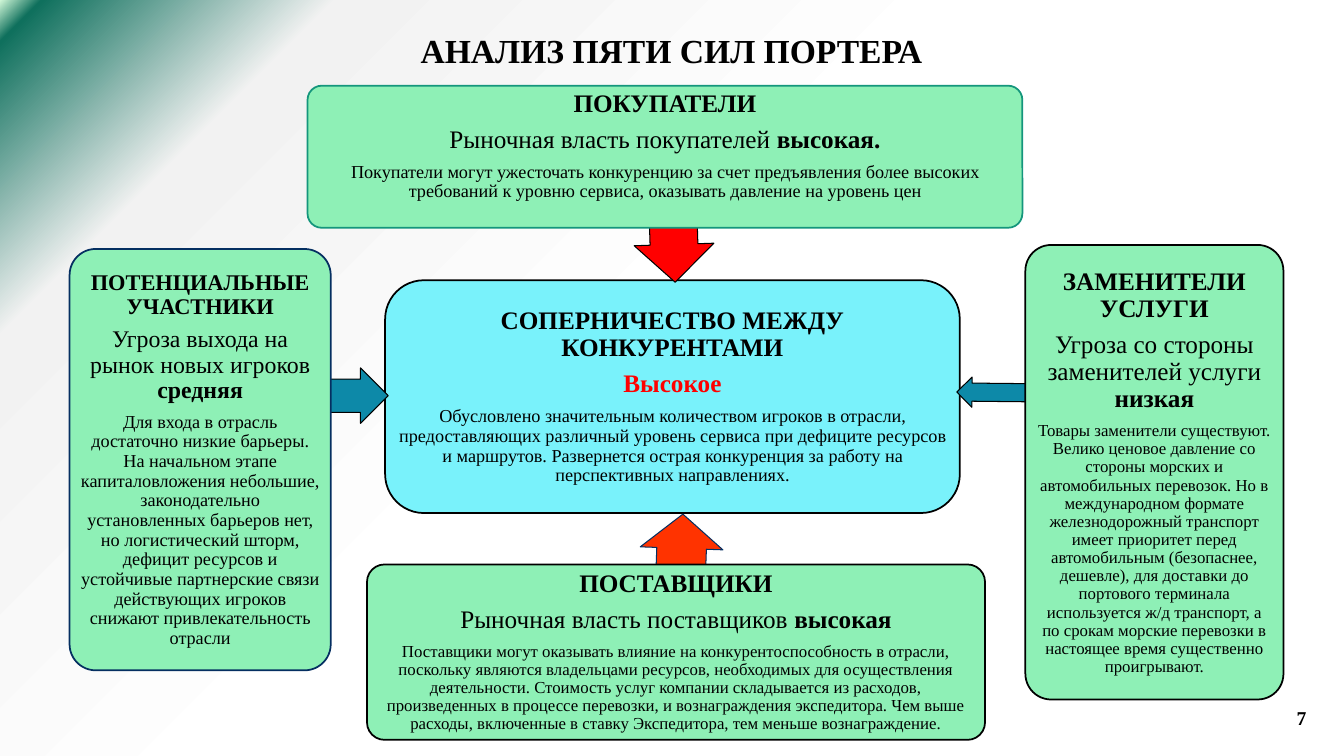
import pptx
import pptx.util
import pptx.oxml
import pptx.dml.color
import pptx.enum.shapes
import pptx.enum.text

Inches = pptx.util.Inches
Pt = pptx.util.Pt
Kind = pptx.enum.shapes.MSO_SHAPE
Align = pptx.enum.text.PP_ALIGN
Anchor = pptx.enum.text.MSO_ANCHOR
GREEN, BLACK, NAVY = "8EF0B6", "000000", "052F61"


def paint(item, tone):
    if hasattr(item, "solid"):
        item.solid()
        item = item.fore_color
    else:
        item = item.color
    item.rgb = pptx.dml.color.RGBColor.from_string(tone)


def style(para, size, tone=BLACK, bold=None):
    para.alignment = Align.CENTER
    para.font.name = "Times New Roman"
    para.font.size = Pt(size)
    para.font.bold = bold
    paint(para.font, tone)


deck = pptx.Presentation()
deck.slide_width = Inches(13.33)
deck.slide_height = Inches(7.5)
slide = deck.slides.add_slide(deck.slide_layouts[5])

stops = [(53, "FFFFFF"), (84, "F2F2F2"), (98, "0F705D"), (100, "D3FADA")]
marks = "".join(
    f'<a:gs pos="{pos * 1000}"><a:srgbClr val="{tone}"/></a:gs>' for pos, tone in stops
)
back = pptx.oxml.parse_xml(
    '<p:bg xmlns:p="http://schemas.openxmlformats.org/presentationml/2006/main"'
    ' xmlns:a="http://schemas.openxmlformats.org/drawingml/2006/main"><p:bgPr>'
    f'<a:gradFill rotWithShape="1"><a:gsLst>{marks}</a:gsLst><a:path path="circle">'
    '<a:fillToRect l="100000" t="100000"/></a:path></a:gradFill>'
    "<a:effectLst/></p:bgPr></p:bg>"
)
slide.element.cSld.insert(0, back)

title = slide.shapes.title
title.left, title.top = Inches(3.98), Inches(0.25)
title.width, title.height = Inches(5.36), Inches(0.5)
title.text_frame.text = "АНАЛИЗ ПЯТИ СИЛ ПОРТЕРА"
title.text_frame.vertical_anchor = Anchor.TOP
title.text_frame.auto_size = pptx.enum.text.MSO_AUTO_SIZE.NONE
style(title.text_frame.paragraphs[0], 24, bold=True)

rival = (
    (3.82, 2.78, 5.7, 2.31), 0.1667, "79F2FB", BLACK, 0.01, 0.01, (18, 18, 13), "FF0000",
    "СОПЕРНИЧЕСТВО МЕЖДУ КОНКУРЕНТАМИ", "", "Высокое",
    "Обусловлено значительным количеством игроков в отрасли, предоставляющих различный "
    "уровень сервиса при дефиците ресурсов и маршрутов. Развернется острая конкуренция "
    "за работу на перспективных направлениях.",
)
entrant = (
    (0.69, 2.47, 2.59, 4.18), 0.1, GREEN, NAVY, 0.03, 0.03, (16, 17, 13), BLACK,
    "ПОТЕНЦИАЛЬНЫЕ УЧАСТНИКИ", "Угроза выхода на рынок новых игроков ", "средняя",
    "Для входа в отрасль достаточно низкие барьеры. На начальном этапе капиталовложения "
    "небольшие, законодательно установленных барьеров нет, но логистический шторм, "
    "дефицит ресурсов и устойчивые партнерские связи действующих игроков снижают "
    "привлекательность отрасли",
)
buyer = (
    (3.05, 0.85, 7.09, 1.41), 0.1, GREEN, "14967C", 0.04, 0.25, (18, 18, 13), BLACK,
    "ПОКУПАТЕЛИ", "Рыночная власть покупателей ", "высокая.",
    "Покупатели могут ужесточать конкуренцию за счет предъявления более высоких "
    "требований к уровню сервиса, оказывать давление на уровень цен",
)
proxy = (
    (10.17, 2.43, 2.56, 4.51), 0.1, GREEN, BLACK, 0.04, 0.04, (18, 18, 12), BLACK,
    "ЗАМЕНИТЕЛИ УСЛУГИ", "Угроза со стороны заменителей услуги ", "низкая",
    "Товары заменители существуют. Велико ценовое давление со стороны морских и "
    "автомобильных перевозок. Но в международном формате железнодорожный транспорт "
    "имеет приоритет перед автомобильным (безопаснее, дешевле), для доставки до "
    "портового терминала используется ж/д транспорт, а по срокам морские перевозки "
    "в настоящее время существенно проигрывают.",
)
vendor = (
    (3.64, 5.6, 6.13, 1.74), 0.1, GREEN, BLACK, 0.04, 0.04, (18, 18, 12), BLACK,
    "ПОСТАВЩИКИ", "Рыночная власть поставщиков ", "высокая",
    "Поставщики могут оказывать влияние на конкурентоспособность в отрасли, поскольку "
    "являются владельцами ресурсов, необходимых для осуществления деятельности. "
    "Стоимость услуг компании складывается из расходов, произведенных в процессе "
    "перевозки, и вознаграждения экспедитора. Чем выше расходы, включенные в ставку "
    "Экспедитора, тем меньше вознаграждение.",
)
arrows = [
    ((1.98, 3.65, 1.87, 0.55), 180, "0D89A8", BLACK),
    ((6.31, 2.03, 0.75, 0.79), 268.2, "FF0000", BLACK),
    ((9.49, 3.75, 2.03, 0.3), 0.6, "0D89A8", BLACK),
    ((6.42, 5.03, 0.68, 0.82), 92.1, "FF3300", NAVY),
]

for item in [rival, *arrows, entrant, buyer, proxy, vendor]:
    arrow = item in arrows
    kind = Kind.LEFT_ARROW if arrow else Kind.ROUNDED_RECTANGLE
    shape = slide.shapes.add_shape(kind, *map(Inches, item[0]))
    shape.shadow.inherit = False
    if arrow:
        place, turn, fill, edge = item
        shape.rotation = turn
        shape.adjustments[0], shape.adjustments[1] = 0.6, 0.5
    else:
        place, curve, fill, edge, inset, foot, sizes, accent, head, plain, strong, body = item
        shape.adjustments[0] = curve
        frame = shape.text_frame
        frame.word_wrap = True
        frame.vertical_anchor = Anchor.MIDDLE
        frame.margin_left = frame.margin_right = frame.margin_top = Inches(inset)
        frame.margin_bottom = Inches(foot)
        rows = [
            ([(head, True)], BLACK),
            ([(plain, False), (strong, True)], accent),
            ([(body, False)], BLACK),
        ]
        for row, (size, (runs, tone)) in enumerate(zip(sizes, rows)):
            para = frame.add_paragraph() if row else frame.paragraphs[0]
            para.line_spacing = 0.9
            para.space_after = Pt(round(size * 0.35, 1))
            style(para, size, tone)
            for words, bold in runs:
                if words:
                    run = para.add_run()
                    run.text = words
                    run.font.bold = bold
    paint(shape.fill, fill)
    paint(shape.line, edge)
    shape.line.width = Pt(0.75 if arrow else 1.25)

page = slide.shapes.add_textbox(Inches(12.48), Inches(6.73), Inches(0.86), Inches(0.77))
page.text_frame.word_wrap = True
page.text_frame.vertical_anchor = Anchor.MIDDLE
page.text_frame.text = "7"
style(page.text_frame.paragraphs[0], 14, bold=True)

deck.save("out.pptx")
